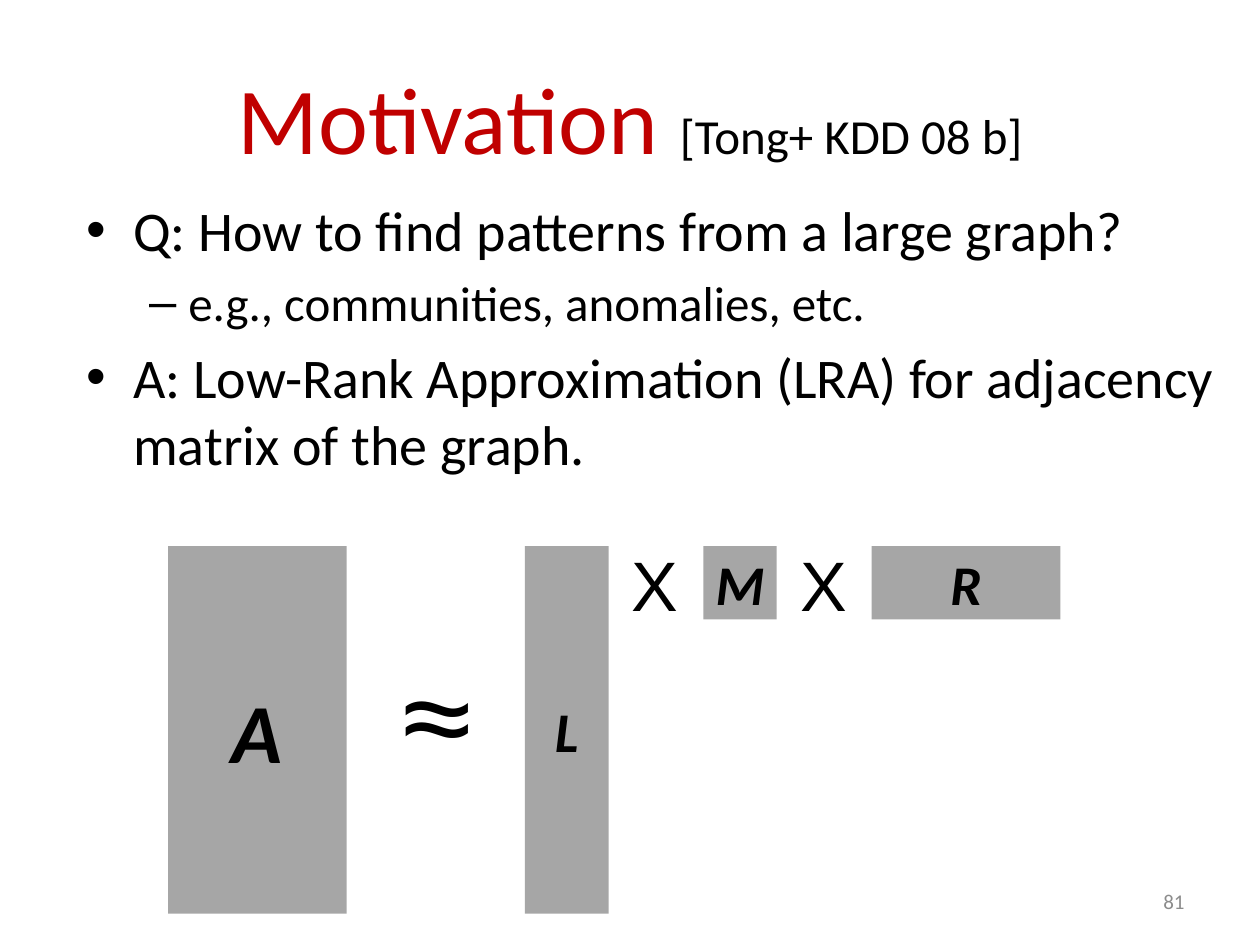
from pptx import Presentation
from pptx import util as u
from pptx.dml.color import RGBColor
from pptx.enum import shapes, text

RED = RGBColor(0xC0, 0x00, 0x00)
BLACK = RGBColor(0x00, 0x00, 0x00)
GREY = RGBColor(0xA6, 0xA6, 0xA6)
PALE = RGBColor(0x8C, 0x8C, 0x8C)
MID = text.MSO_ANCHOR.MIDDLE
ALIGN = text.PP_ALIGN


class Page:
    face = "Calibri"
    sign = "Arial"

    def __init__(self, deck):
        self.slide = deck.slides.add_slide(deck.slide_layouts[1])

    def style(self, font, size, color=BLACK, face=None):
        font.name = face or self.face
        font.size = u.Pt(size)
        font.color.rgb = color

    def place(self, shape, box):
        shape.left, shape.top, shape.width, shape.height = map(u.Cm, box)
        shape.text_frame.auto_size = text.MSO_AUTO_SIZE.NONE

    def title(self, box, parts):
        shape = self.slide.shapes.title
        self.place(shape, box)
        shape.text_frame.vertical_anchor = MID
        for words, size, color in parts:
            run = shape.text_frame.paragraphs[0].add_run()
            run.text = words
            self.style(run.font, size, color)

    def body(self, box, items):
        shape = self.slide.placeholders[1]
        self.place(shape, box)
        frame = shape.text_frame
        frame.text = "\n".join(words for words, _, _ in items)
        for para, (_, level, size) in zip(frame.paragraphs, items):
            para.level = level
            self.style(para.font, size)

    def label(self, words, box, size, color=BLACK, face=None,
              align=ALIGN.LEFT, anchor=text.MSO_ANCHOR.TOP, group=None):
        shape = (group or self.slide).shapes.add_textbox(*map(u.Cm, box))
        frame = shape.text_frame
        frame.word_wrap = True
        frame.vertical_anchor = anchor
        para = frame.paragraphs[0]
        para.text = words
        para.alignment = align
        self.style(para.font, size, color, face)

    def block(self, name, box, size):
        kind = shapes.MSO_SHAPE.RECTANGLE
        shape = self.slide.shapes.add_shape(kind, *map(u.Cm, box))
        shape.shadow.inherit = False
        shape.fill.solid()
        shape.fill.fore_color.rgb = GREY
        shape.line.fill.background()
        frame = shape.text_frame
        frame.word_wrap = False
        frame.vertical_anchor = MID
        para = frame.paragraphs[0]
        para.text = name
        para.alignment = ALIGN.CENTER
        self.style(para.font, size)
        para.font.bold = para.font.italic = True

    def approx(self, left, tops):
        group = self.slide.shapes.add_group_shape()
        for top in tops:
            self.label("~", (left, top, 2.12, 4.87), 72,
                       face=self.sign, group=group)


def main():
    deck = Presentation()
    deck.slide_width, deck.slide_height = u.Cm(25.4), u.Cm(19.05)
    page = Page(deck)
    page.title((1.27, 0.76, 22.86, 3.18), [
        ("Motivation ", 54, RED),
        ("[Tong+ KDD 08 b]", 28, BLACK),
    ])
    page.body((1.48, 3.81, 24.55, 12.5), [
        ("Q: How to find patterns from a large graph?", 0, 32),
        ("e.g., communities, anomalies, etc.", 1, 28),
        ("A: Low-Rank Approximation (LRA) for adjacency matrix of the graph.",
         0, 32),
    ])
    page.label("81", (18.2, 17.65, 5.93, 1.02), 12, PALE,
               align=ALIGN.RIGHT, anchor=MID)
    top, tall, short = 11.01, 7.41, 1.48
    for name, left, width, height, size in [
        ("A", 3.39, 3.6, tall, 48),
        ("L", 10.58, 1.69, tall, 32),
        ("M", 14.18, short, short, 32),
        ("R", 17.57, 3.81, short, 32),
    ]:
        page.block(name, (left, top, width, height), size)
    for left in (12.49, 15.88):
        page.label("X", (left, 10.8, 2.12, 1.96), 40, face=page.sign)
    page.approx(7.83, (12.91, 12.49))
    deck.save("out.pptx")


if __name__ == "__main__":
    main()
